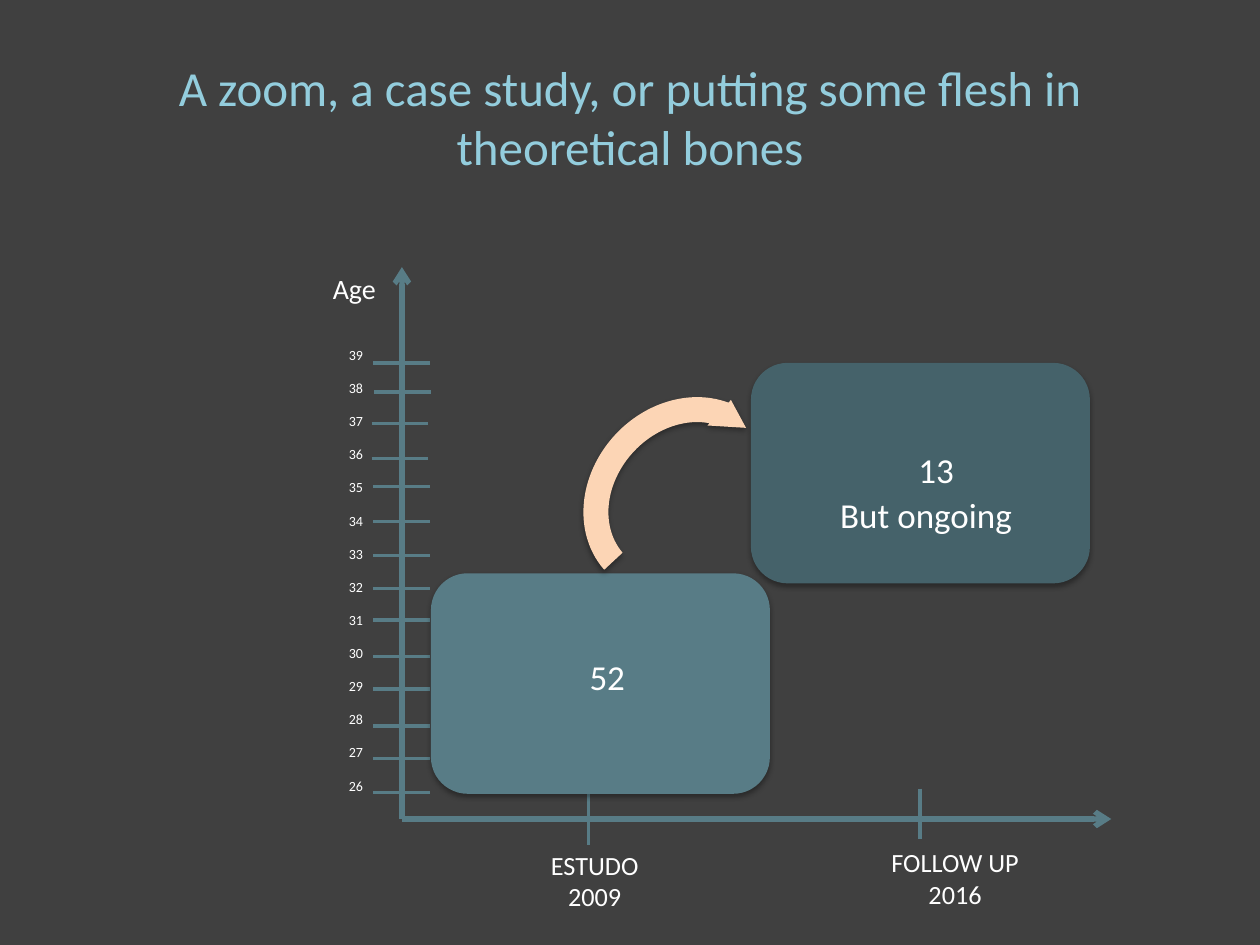
from dataclasses import dataclass

import pptx
import pptx.dml.color
import pptx.enum.shapes
import pptx.enum.text
import pptx.oxml
import pptx.oxml.ns
import pptx.util
from pptx.util import Inches

TEAL, DARK, PEACH = "587C86", "45626A", "FCD5B5"
SKY, WHITE, GREY = "93CDDD", "FFFFFF", "404040"
ALIGN = pptx.enum.text.PP_ALIGN
KIND = pptx.enum.shapes.MSO_SHAPE
NS = pptx.oxml.ns.nsdecls("a")


@dataclass
class Label:
    text: str
    left: float
    top: float
    width: float
    height: float
    size: float
    align: int = ALIGN.CENTER
    hue: str = WHITE
    gap: float = 0


@dataclass
class Line:
    x1: float
    y1: float
    x2: float
    y2: float
    width: float = 2
    arrow: bool = False


@dataclass
class Block:
    kind: int
    left: float
    top: float
    width: float
    height: float
    hue: str


def rgb(code: str) -> pptx.dml.color.RGBColor:
    return pptx.dml.color.RGBColor.from_string(code)


def put_text(slide, item: Label):
    box = slide.shapes.add_textbox(Inches(item.left), Inches(item.top),
                                   Inches(item.width), Inches(item.height))
    frame = box.text_frame
    frame.word_wrap = True
    frame.text = item.text
    for para in frame.paragraphs:
        para.alignment = item.align
        para.space_after = pptx.util.Pt(item.gap)
        for run in para.runs:
            run.font.name = "Calibri"
            run.font.size = pptx.util.Pt(item.size)
            run.font.color.rgb = rgb(item.hue)
    return box


def put_line(slide, item: Line) -> None:
    line = slide.shapes.add_connector(
        pptx.enum.shapes.MSO_CONNECTOR.STRAIGHT, Inches(item.x1),
        Inches(item.y1), Inches(item.x2), Inches(item.y2))
    line.line.color.rgb = rgb(TEAL)
    line.line.width = pptx.util.Pt(item.width)
    if item.arrow:
        line.line._get_or_add_ln().append(
            pptx.oxml.parse_xml(f'<a:tailEnd {NS} type="arrow"/>'))
    line._element.spPr.append(pptx.oxml.parse_xml(f"<a:effectLst {NS}/>"))


def put_block(slide, item: Block):
    """Draw a borderless shape with a soft shadow below it."""
    shape = slide.shapes.add_shape(item.kind, Inches(item.left), Inches(item.top),
                                   Inches(item.width), Inches(item.height))
    shape.fill.solid()
    shape.fill.fore_color.rgb = rgb(item.hue)
    shape.line.fill.background()
    shape._element.spPr.append(pptx.oxml.parse_xml(
        f'<a:effectLst {NS}><a:outerShdw blurRad="40000" dist="23000" '
        'dir="5400000" rotWithShape="0"><a:srgbClr val="000000">'
        '<a:alpha val="35000"/></a:srgbClr></a:outerShdw></a:effectLst>'))
    return shape


AXES = [Line(3.19, 6.5, 8.82, 6.5, 3, True), Line(3.19, 6.5, 3.19, 2.12, 3, True)]
TICKS = [6.29, 6.02, 5.76, 5.47, 5.21, 4.92, 4.67, 4.41, 4.14, 3.86,
         3.64, 3.36, 3.11, 2.88]
SHIFTS = {3.64: -0.01, 3.36: -0.01, 3.11: 0.01}
YEARS = [Line(4.67, 6.3, 4.67, 6.71), Line(7.3, 6.26, 7.3, 6.66)]
AGES = "\n".join(str(age) for age in range(39, 25, -1))
TITLE = Label("A zoom, a case study, or putting some flesh in theoretical bones",
              0.5, 0.3, 9, 1.25, 28, hue=SKY)
NAMES = [
    Label("Age", 2.16, 2.11, 0.92, 0.37, 16, ALIGN.RIGHT),
    Label("ESTUDO 2009", 4.26, 6.69, 0.92, 0.61, 15),
    Label("FOLLOW UP 2016", 6.84, 6.67, 1.48, 0.61, 15),
    Label(AGES, 2.49, 2.7, 0.49, 3.74, 8, ALIGN.RIGHT, gap=9.36),
]
BLOCKS = [Block(KIND.ROUNDED_RECTANGLE, 3.42, 4.55, 2.69, 1.75, TEAL),
          Block(KIND.ROUNDED_RECTANGLE, 5.96, 2.88, 2.69, 1.75, DARK)]
COUNTS = [Label("52", 4.36, 5.15, 0.92, 0.44, 20),
          Label("13", 6.97, 3.51, 0.92, 0.44, 20),
          Label("But ongoing", 6.39, 3.87, 1.92, 0.44, 20)]
CURVE = Block(KIND.CIRCULAR_ARROW, 4.53, 3.18, 1.77, 1.53, PEACH)
BENDS = [0.13, 11.42, 204.58, 110.61, 0.09]


def main() -> None:
    deck = pptx.Presentation()
    deck.slide_width, deck.slide_height = Inches(10), Inches(7.5)
    slide = deck.slides.add_slide(deck.slide_layouts[6])
    slide.background.fill.solid()
    slide.background.fill.fore_color.rgb = rgb(GREY)

    title = put_text(slide, TITLE)
    title.text_frame.vertical_anchor = pptx.enum.text.MSO_ANCHOR.MIDDLE
    ticks = []
    for y in TICKS:
        x = 2.96 + SHIFTS.get(y, 0)
        ticks.append(Line(x, y, x + 0.45, y))
    for line in AXES + ticks + YEARS:
        put_line(slide, line)
    for name in NAMES:
        put_text(slide, name)
    for block in BLOCKS:
        put_block(slide, block)
    curve = put_block(slide, CURVE)
    curve.rotation = 312.7
    for spot, bend in enumerate(BENDS):
        curve.adjustments[spot] = bend
    for count in COUNTS:
        put_text(slide, count)
    deck.save("out.pptx")


if __name__ == "__main__":
    main()
